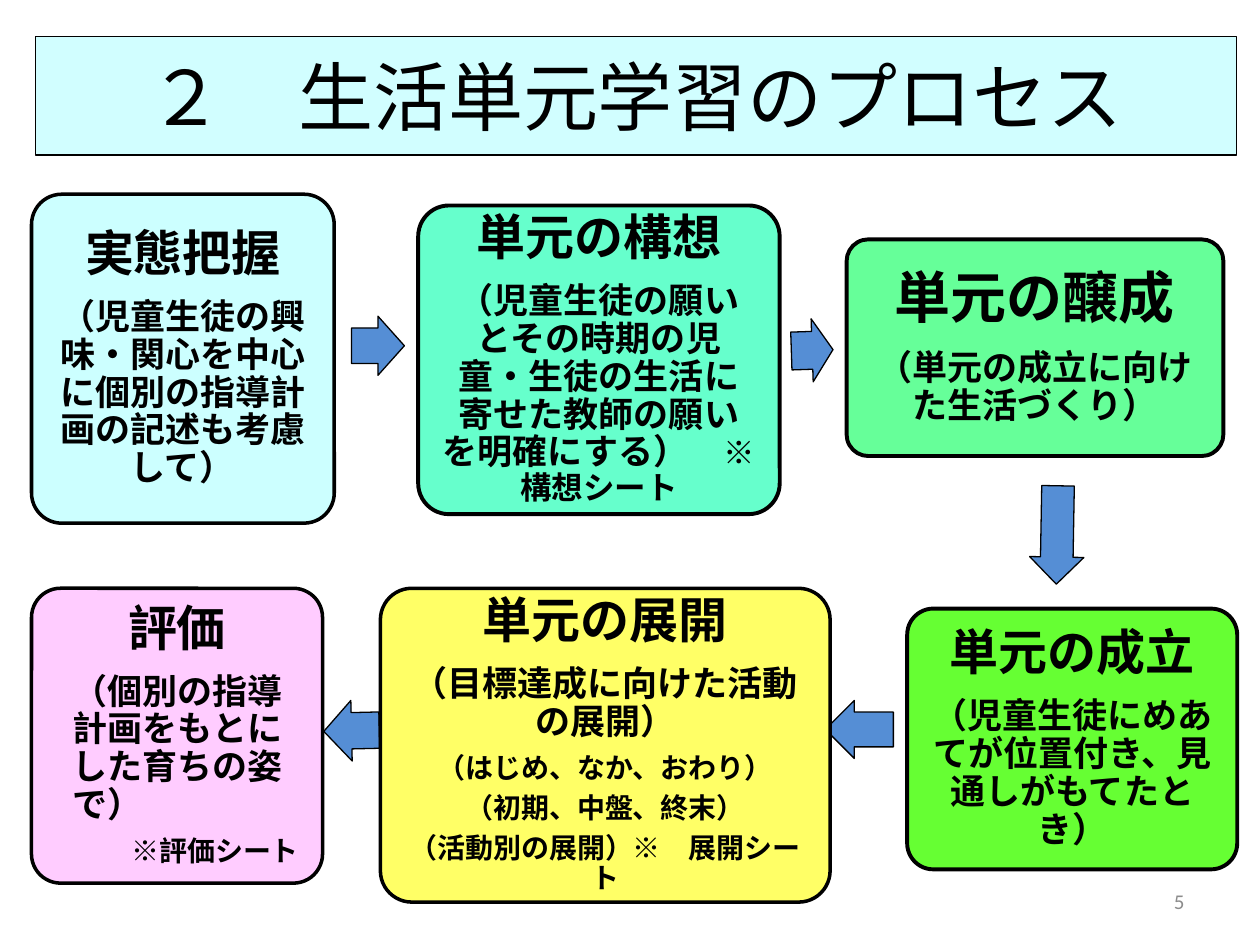
from pptx import Presentation
from pptx.dml.color import RGBColor
from pptx.enum.shapes import MSO_SHAPE
from pptx.enum.text import MSO_ANCHOR, MSO_AUTO_SIZE, PP_ALIGN
from pptx.util import Pt

ROUND, ARROW = MSO_SHAPE.ROUNDED_RECTANGLE, MSO_SHAPE.RIGHT_ARROW
LEFT, MID, RIGHT = PP_ALIGN.LEFT, PP_ALIGN.CENTER, PP_ALIGN.RIGHT
MIDDLE = MSO_ANCHOR.MIDDLE

HEX = {
    "ink": "000000", "gray": "8C8C8C", "title": "D1FEFF", "arrow": "558ED5",
    "aqua": "CCFFFF", "mint": "66FFCC", "green": "66FF99", "lime": "66FF33",
    "yellow": "FFFF66", "pink": "FFCCFF",
}

# Each step: place, fill, line width, paragraphs as (align, indent, runs)
STEPS = [
    ((18, 111, 173, 188), "aqua", 2, [
        (MID, 0, [("実態把握", 28)]),
        (MID, 0, [("（児童生徒の興味・関心を中心に個別の指導計画の記述も考慮して）", 20)])]),
    ((239, 117.4, 206.6, 176.4), "mint", 2.25, [
        (MID, 0, [("単元の構想", 28)]),
        (MID, 0, [("（児童生徒の願いとその時期の児童・生徒の生活に寄せた教師の願いを明確にする）　", 20),
                  ("※構想シート", 18)])]),
    ((483.8, 136.8, 215.3, 123.8), "green", 2.25, [
        (MID, 0, [("単元の醸成", 32)]),
        (MID, 0, [("（単元の成立に向けた生活づくり）", 20)])]),
    ((518.4, 347.8, 188.6, 149), "lime", 2.25, [
        (MID, 0, [("単元の成立", 28)]),
        (MID, 0, [("（児童生徒にめあてが位置付き、見通しがもてたとき）", 20)])]),
    ((217.4, 336.2, 257, 179.3), "yellow", 2, [
        (MID, 0, [("単元の展開", 28)]),
        (MID, 0, [("（目標達成に向けた活動の展開）", 20)]),
        (MID, 0, [("（はじめ、なか、おわり）", 16)]),
        (MID, 0, [("（初期、中盤、終末）", 16)]),
        (MID, 0, [("（活動別の展開）※　展開シート", 16)])]),
    ((18, 336.2, 166.3, 168.5), "pink", 2, [
        (MID, 0, [("評価", 28)]),
        (LEFT, 10, [("（個別の指導計画をもとにした育ちの姿で）", 20)]),
        (RIGHT, 0, [("※評価シート", 16)])]),
]

# Each arrow: place, turn in degrees
ARROWS = [
    ((200.9, 180.7, 30.2, 33.8), 0),
    ((452.2, 182.2, 23.8, 36), 358.1),
    ((576, 290.2, 56.2, 31), 91),
    ((471.6, 400.3, 38.9, 33.1), 180),
    ((185, 400.3, 31.7, 34.6), 178.7),
]


def rgb(name):
    return RGBColor.from_string(HEX[name])


def box(place):
    return [Pt(n) for n in place]


def paint(shape, fill, width):
    shape.fill.solid()
    shape.fill.fore_color.rgb = rgb(fill)
    shape.line.color.rgb = rgb("ink")
    shape.line.width = Pt(width)


def add_run(para, text, size, bold=False, color="ink", face="Arial"):
    run = para.add_run()
    run.text = text
    font = run.font
    font.size, font.bold, font.name = Pt(size), bold, face
    font.color.rgb = rgb(color)


def add_shape(slide, kind, place, fill, width):
    shape = slide.shapes.add_shape(kind, *box(place))
    shape.shadow.inherit = False
    paint(shape, fill, width)
    return shape


def add_arrow(slide, place, turn):
    shape = add_shape(slide, ARROW, place, "arrow", 0.75)
    shape.adjustments[0], shape.adjustments[1] = 0.6, 0.5
    shape.rotation = turn


def add_step(slide, place, fill, width, paras):
    shape = add_shape(slide, ROUND, place, fill, width)
    shape.adjustments[0] = 0.1
    frame = shape.text_frame
    frame.word_wrap = True
    frame.vertical_anchor = MIDDLE
    frame.margin_left = frame.margin_right = Pt(8.6)
    frame.margin_top = frame.margin_bottom = Pt(8.6)
    for i, (align, indent, runs) in enumerate(paras):
        para = frame.add_paragraph() if i else frame.paragraphs[0]
        para.alignment = align
        para.line_spacing = 0.9
        para.space_after = Pt(round(0.35 * runs[0][1], 1))
        if indent:
            para._p.get_or_add_pPr().set("marL", str(Pt(indent)))
        for text, size in runs:
            add_run(para, text, size, bold=True)


def add_title(slide, text):
    title = slide.shapes.title
    title.left, title.top, title.width, title.height = box((20.2, 20.9, 686.2, 67.7))
    paint(title, "title", 0.75)
    frame = title.text_frame
    frame.auto_size = MSO_AUTO_SIZE.NONE
    frame.vertical_anchor = MIDDLE
    para = frame.paragraphs[0]
    para.alignment = MID
    add_run(para, text, 42.9)


def add_number(slide, text):
    frame = slide.shapes.add_textbox(*box((516.2, 500.4, 167.8, 28.8))).text_frame
    frame.word_wrap = True
    frame.vertical_anchor = MIDDLE
    para = frame.paragraphs[0]
    para.alignment = RIGHT
    add_run(para, text, 12, color="gray", face="Calibri")


def main():
    deck = Presentation()
    deck.slide_width, deck.slide_height = Pt(720), Pt(540)
    slide = deck.slides.add_slide(deck.slide_layouts[5])

    # Heading
    add_title(slide, "２　生活単元学習のプロセス")

    # Process: arrows lie behind the steps
    for arrow in ARROWS:
        add_arrow(slide, *arrow)
    for step in STEPS:
        add_step(slide, *step)

    # Page number
    add_number(slide, "5")
    deck.save("out.pptx")


if __name__ == "__main__":
    main()
